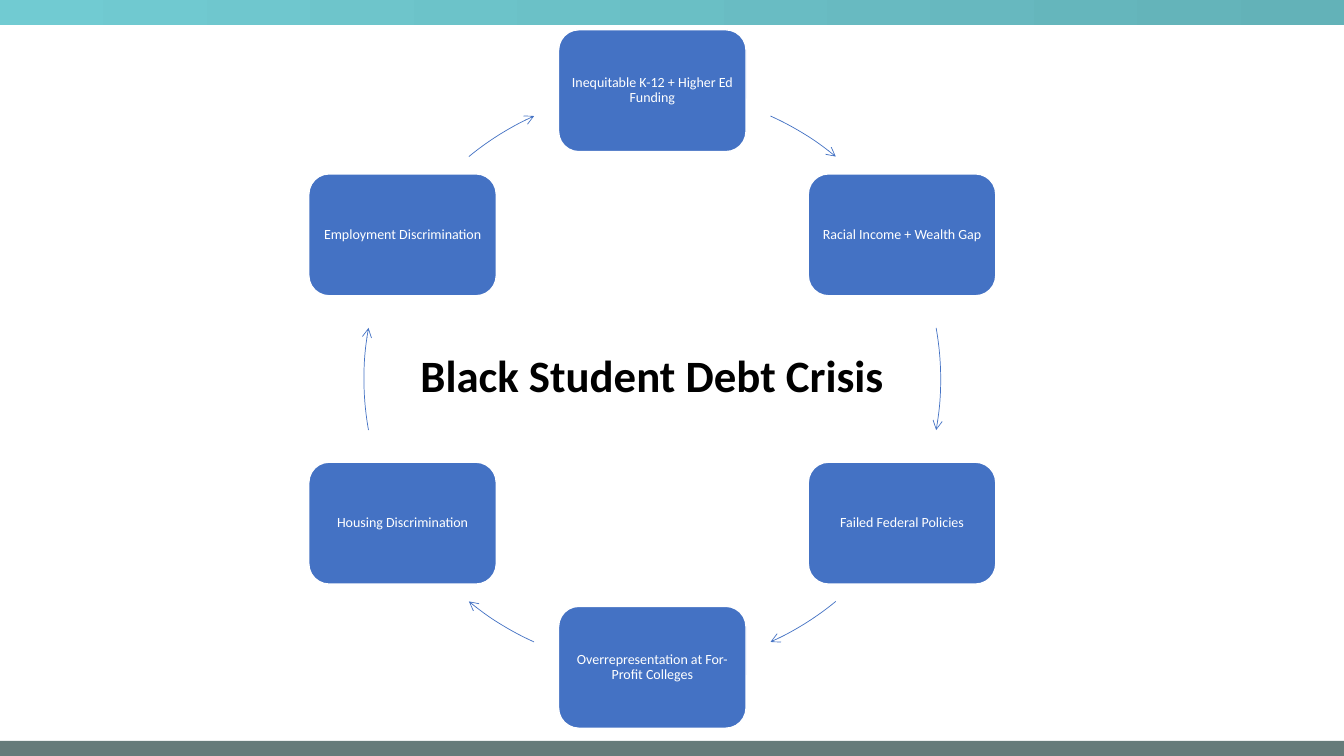
from math import cos, radians, sin

from lxml import etree
from pptx import Presentation
from pptx.dml.color import RGBColor
from pptx.enum import shapes, text
from pptx.oxml import ns
from pptx.util import Inches, Pt

BLUE = RGBColor(0x44, 0x72, 0xC4)
WHITE = RGBColor(0xFF, 0xFF, 0xFF)
BLACK = RGBColor(0, 0, 0)
TEAL = RGBColor(0x71, 0xCB, 0xD2)
DEEP = RGBColor(0x63, 0xB2, 0xB8)
SLATE = RGBColor(0x66, 0x7B, 0x7A)
MID_X, MID_Y, RADIUS = 6.47, 3.76, 2.86
BOX_W, BOX_H = 1.86, 1.21


def add_box(kind, x, y, w, h):
    box = slide.shapes.add_shape(kind, Inches(x), Inches(y), Inches(w), Inches(h))
    box.shadow.inherit = False
    box.line.fill.background()
    return box


def add_label(frame, label, size, color, bold):
    frame.word_wrap = True
    frame.vertical_anchor = text.MSO_ANCHOR.MIDDLE
    para = frame.paragraphs[0]
    para.alignment = text.PP_ALIGN.CENTER
    para.line_spacing = 0.9
    run = para.add_run()
    run.text = label
    font = run.font
    font.name, font.size, font.bold = "Calibri", Pt(size), bold
    font.color.rgb = color


deck = Presentation()
deck.slide_width, deck.slide_height = Inches(13.33), Inches(7.5)
slide = deck.slides.add_slide(deck.slide_layouts[5])

# Bands along the top and bottom edges
top = add_box(shapes.MSO_SHAPE.RECTANGLE, 0, -0.01, 13.33, 0.26)
top.fill.gradient()
top.fill.gradient_angle = 0
for stop, color, place in zip(top.fill.gradient_stops, (TEAL, DEEP), (0, 1)):
    stop.color.rgb = color
    stop.position = place
base = add_box(shapes.MSO_SHAPE.RECTANGLE, 0, 7.35, 13.33, 0.16)
base.fill.solid()
base.fill.fore_color.rgb = SLATE

# Title in the middle of the cycle
title = slide.shapes.title
title.left, title.top = Inches(3.93), Inches(3.4)
title.width, title.height = Inches(5.08), Inches(0.69)
add_label(title.text_frame, "Black Student Debt Crisis", 32, BLACK, True)

# Six stages clockwise from the top, each with the arc that follows it
stages = [
    "Inequitable K-12 + Higher Ed Funding",
    "Racial Income + Wealth Gap",
    "Failed Federal Policies",
    "Overrepresentation at For-Profit Colleges",
    "Housing Discrimination",
    "Employment Discrimination",
]
arcs = [(24.2, 39.5), (79.8, 100.2), (140.5, 155.8)]
for i, stage in enumerate(stages):
    turn = radians(60 * i)
    x = MID_X + RADIUS * sin(turn) - BOX_W / 2
    y = MID_Y - RADIUS * cos(turn) - BOX_H / 2
    box = add_box(shapes.MSO_SHAPE.ROUNDED_RECTANGLE, x, y, BOX_W, BOX_H)
    box.fill.solid()
    box.fill.fore_color.rgb = BLUE
    box.line.color.rgb = WHITE
    box.line.width = Pt(1)
    frame = box.text_frame
    frame.margin_left = frame.margin_right = Inches(0.04)
    frame.margin_top = frame.margin_bottom = Inches(0.04)
    add_label(frame, stage, 10, WHITE, False)

    arc = add_box(shapes.MSO_SHAPE.ARC, MID_X - RADIUS, MID_Y - RADIUS,
                  2 * RADIUS, 2 * RADIUS)
    # Arc angles run clockwise from the right; one degree is 0.6 units
    for k, angle in enumerate(arcs[i % 3]):
        arc.adjustments[k] = (angle - 90 + 180 * (i // 3)) % 360 * 0.6
    arc.fill.background()
    arc.line.color.rgb = BLUE
    arc.line.width = Pt(0.5)
    line = arc.line.fill._xPr
    etree.SubElement(line, ns.qn("a:tailEnd"), type="arrow")

deck.save("out.pptx")
